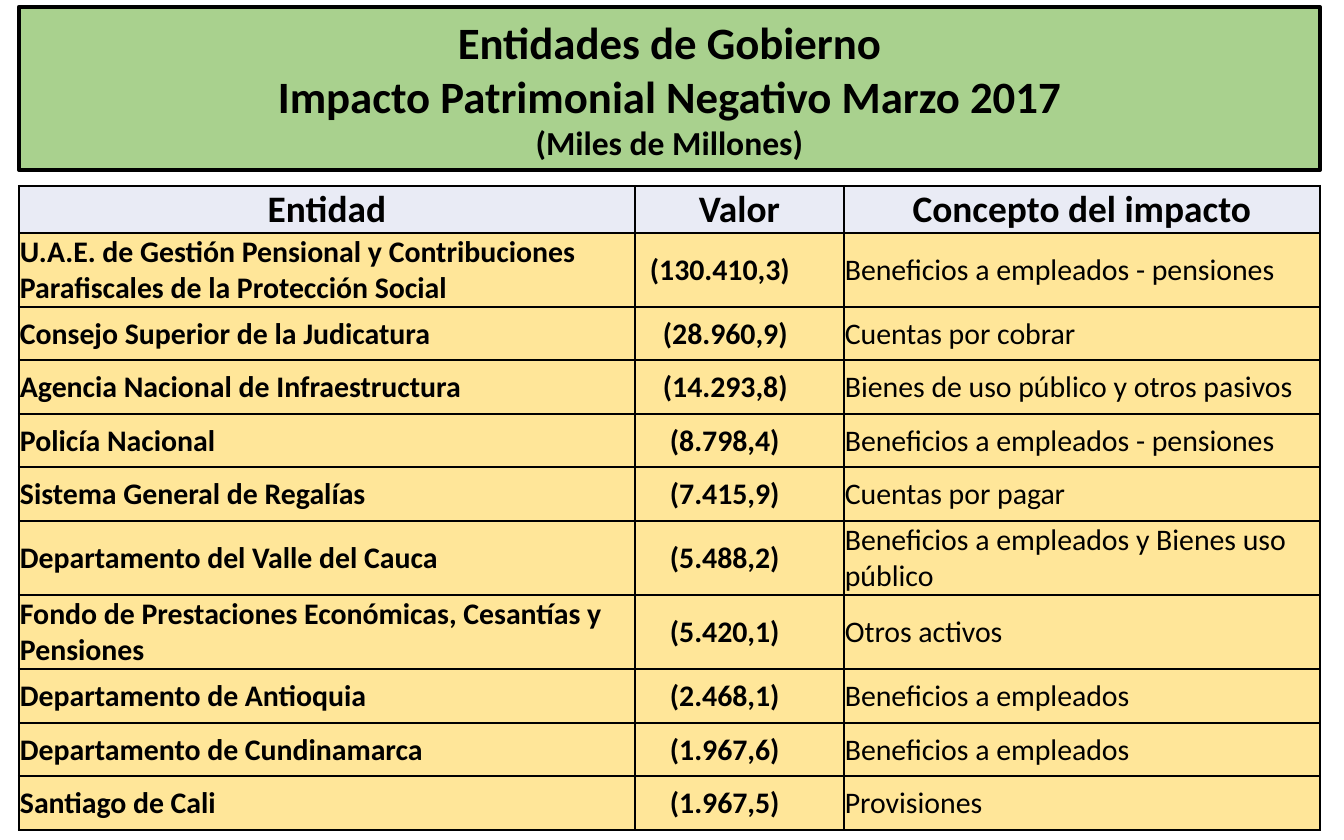
from dataclasses import dataclass

from lxml.etree import SubElement
from pptx import Presentation
from pptx.dml.color import RGBColor
from pptx.enum.text import MSO_ANCHOR, MSO_AUTO_SIZE, PP_ALIGN
from pptx.oxml.ns import qn
from pptx.util import Emu, Pt

EMU_PER_PX = 914400 / 134.4
FONT = "Calibri"
BLACK = RGBColor(0x00, 0x00, 0x00)
GREEN = RGBColor(0xA9, 0xD1, 0x8E)
PALE_BLUE = RGBColor(0xE9, 0xEB, 0xF5)
SAND = RGBColor(0xFF, 0xE6, 0x99)

LEFT, WIDTH = 19, 1301
COLUMN_WIDTHS = (616, 209, 476)
HEADER_HEIGHT = 47
HEADERS = ("Entidad", "Valor", "Concepto del impacto")
TITLE_LINES = (
    ("Entidades de Gobierno", 24),
    ("Impacto Patrimonial Negativo Marzo 2017", 24),
    ("(Miles de Millones)", 18),
)


@dataclass(frozen=True)
class Impact:
    entity: str
    value: str
    concept: str
    height: int
    indent: int = 35


@dataclass(frozen=True)
class CellStyle:
    size: int
    fill: RGBColor
    anchor: MSO_ANCHOR
    align: PP_ALIGN


HEADER_STYLE = CellStyle(20, PALE_BLUE, MSO_ANCHOR.BOTTOM, PP_ALIGN.CENTER)
BODY_STYLE = CellStyle(16, SAND, MSO_ANCHOR.MIDDLE, PP_ALIGN.LEFT)

IMPACTS = (
    Impact("U.A.E. de Gestión Pensional y Contribuciones Parafiscales de la Protección Social",
           "(130.410,3)", "Beneficios a empleados - pensiones", 73, 15),
    Impact("Consejo Superior de la Judicatura", "(28.960,9)", "Cuentas por cobrar", 53, 28),
    Impact("Agencia Nacional de Infraestructura", "(14.293,8)",
           "Bienes de uso público y otros pasivos", 54, 28),
    Impact("Policía Nacional", "(8.798,4)", "Beneficios a empleados - pensiones", 53),
    Impact("Sistema General de Regalías", "(7.415,9)", "Cuentas por pagar", 54),
    Impact("Departamento del Valle del Cauca", "(5.488,2)",
           "Beneficios a empleados y Bienes uso público", 73),
    Impact("Fondo de Prestaciones Económicas, Cesantías y Pensiones", "(5.420,1)",
           "Otros activos", 73),
    Impact("Departamento de Antioquia", "(2.468,1)", "Beneficios a empleados", 54),
    Impact("Departamento de Cundinamarca", "(1.967,6)", "Beneficios a empleados", 53),
    Impact("Santiago de Cali", "(1.967,5)", "Provisiones", 54),
)


def px(length: int) -> Emu:
    return Emu(round(length * EMU_PER_PX))


def add_span(para, text: str, size: int, bold: bool = True) -> None:
    span = para.add_run()
    span.text = text
    span.font.name = FONT
    span.font.size = Pt(size)
    span.font.bold = bold
    span.font.color.rgb = BLACK


def add_borders(cell) -> None:
    """Draw the four cell edges; the schema wants them before the fill."""
    properties = cell._tc.get_or_add_tcPr()
    for edge in ("a:lnL", "a:lnR", "a:lnT", "a:lnB"):
        line = SubElement(properties, qn(edge), w=str(Pt(1.5)))
        paint = SubElement(line, qn("a:solidFill"))
        SubElement(paint, qn("a:srgbClr"), val=str(BLACK))


def fill_cell(cell, text: str, style: CellStyle, bold: bool = True, indent: int = 1) -> None:
    add_borders(cell)
    cell.fill.solid()
    cell.fill.fore_color.rgb = style.fill
    cell.vertical_anchor = style.anchor
    cell.margin_left = px(indent)
    cell.margin_right = cell.margin_top = px(1)
    cell.margin_bottom = 0
    para = cell.text_frame.paragraphs[0]
    para.alignment = style.align
    add_span(para, text, style.size, bold)


def add_title(page) -> None:
    box = page.shapes.title
    box.left, box.top, box.width, box.height = px(LEFT), px(7), px(WIDTH), px(163)
    box.fill.solid()
    box.fill.fore_color.rgb = GREEN
    box.line.color.rgb = BLACK
    box.line.width = Pt(2.25)
    frame = box.text_frame
    frame.word_wrap = True
    frame.auto_size = MSO_AUTO_SIZE.NONE
    frame.vertical_anchor = MSO_ANCHOR.MIDDLE
    for index, (text, size) in enumerate(TITLE_LINES):
        para = frame.add_paragraph() if index else frame.paragraphs[0]
        para.alignment = PP_ALIGN.CENTER
        add_span(para, text, size)


def add_impact_table(page) -> None:
    heights = [HEADER_HEIGHT] + [impact.height for impact in IMPACTS]
    table = page.shapes.add_table(
        len(heights), len(COLUMN_WIDTHS), px(LEFT), px(186), px(WIDTH), px(sum(heights))
    ).table
    for column, width in zip(table.columns, COLUMN_WIDTHS):
        column.width = px(width)
    for row, height in zip(table.rows, heights):
        row.height = px(height)
    for column, header in enumerate(HEADERS):
        fill_cell(table.cell(0, column), header, HEADER_STYLE)
    for row, impact in enumerate(IMPACTS, start=1):
        fill_cell(table.cell(row, 0), impact.entity, BODY_STYLE)
        fill_cell(table.cell(row, 1), impact.value, BODY_STYLE, indent=impact.indent)
        fill_cell(table.cell(row, 2), impact.concept, BODY_STYLE, bold=False)


def main() -> None:
    deck = Presentation()
    deck.slide_width, deck.slide_height = px(1344), px(840)
    page = deck.slides.add_slide(deck.slide_layouts[5])
    add_title(page)
    add_impact_table(page)
    deck.save("out.pptx")


if __name__ == "__main__":
    main()
